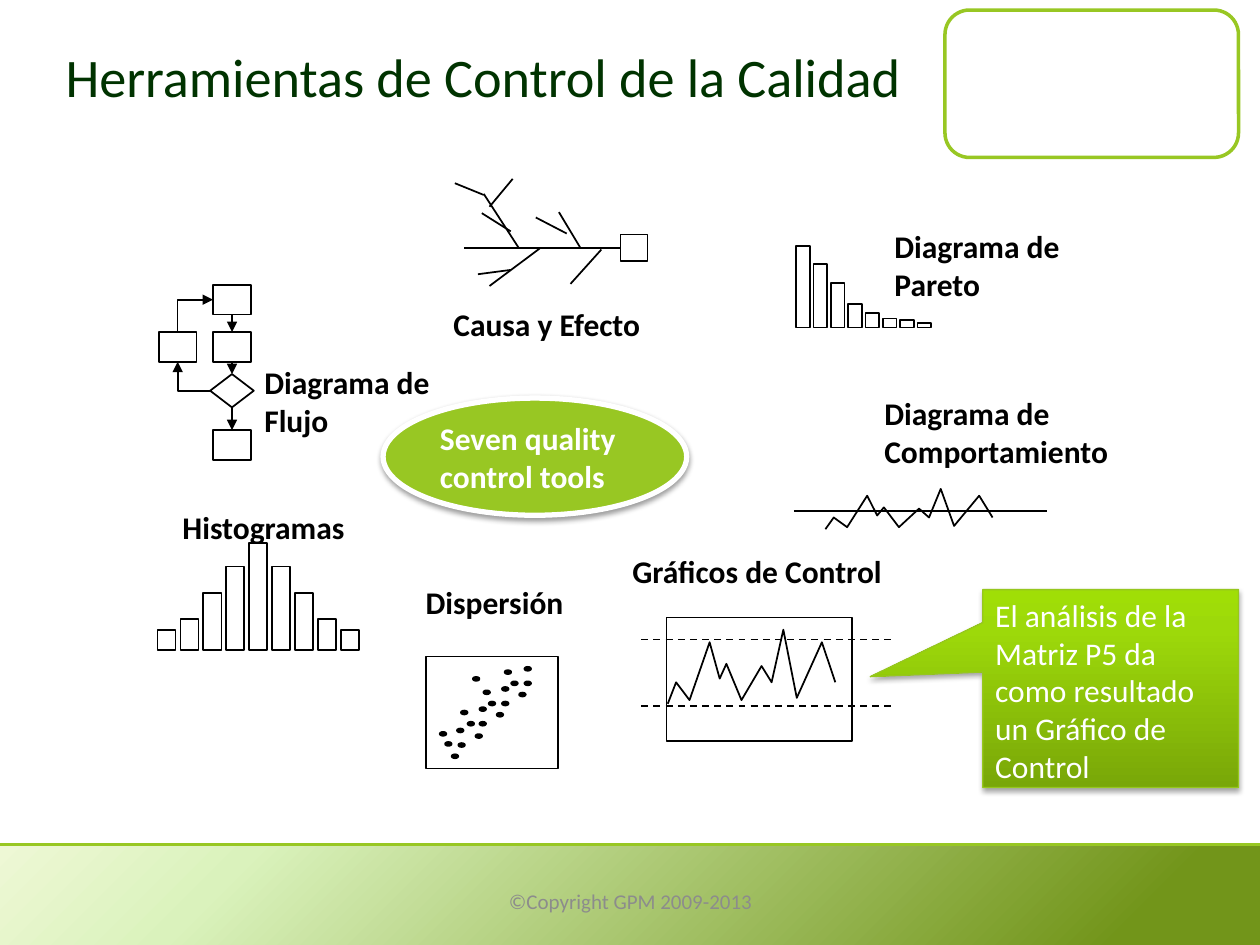
from dataclasses import dataclass
from lxml.etree import SubElement
from pptx import Presentation
from pptx.dml.color import RGBColor
from pptx.enum.dml import MSO_LINE
from pptx.enum.shapes import MSO_CONNECTOR as CX, MSO_SHAPE as SH
from pptx.enum.text import MSO_ANCHOR as ANC, MSO_AUTO_SIZE as FIT, PP_ALIGN as AL
from pptx.oxml.ns import qn
from pptx.util import Inches, Pt

C = {"white": "FFFFFF", "black": "000000", "lime": "98C723", "title": "003300",
     "grey": "8C8C8C", "edge": "96C71E"}
BAND = [(0, "EEF8D5"), (19, "DAF2BC"), (89, "72951A")]
CALLOUT = [(0, "79A708"), (80, "9DD90A"), (100, "A0DE06")]
# The run and control charts share one trace, in percent of its box
TRACE = [(0, 100), (5, 71), (13, 95), (25, 17), (31, 66), (35, 46), (44, 95),
         (56, 49), (62, 71), (69, 0), (77, 92), (92, 17), (100, 71)]


@dataclass
class Box:
    """An area in inches, divided into columns and rows."""
    x: float
    y: float
    w: float
    h: float
    cols: int = 100
    rows: int = 100

    def pt(self, cx, cy):
        return self.x + self.w * cx / self.cols, self.y + self.h * cy / self.rows

    def sub(self, cx, cy, cw, ch):
        return Box(*self.pt(cx, cy), self.w * cw / self.cols, self.h * ch / self.rows)

    def emu(self):
        return [Inches(v) for v in (self.x, self.y, self.w, self.h)]


def rgb(name):
    return RGBColor.from_string(C[name])


def write(sp, text, size, color, bold=False, align=AL.LEFT, anchor=ANC.TOP):
    tf = sp.text_frame
    tf.word_wrap, tf.auto_size, tf.vertical_anchor = True, FIT.NONE, anchor
    p = tf.paragraphs[0]
    p.alignment = align
    r = p.add_run()
    r.text = text
    r.font.name, r.font.size, r.font.bold = "Calibri", Pt(size), bold
    r.font.color.rgb = rgb(color)
    return tf


def add_shape(s, box, kind=SH.RECTANGLE, fill="white", line="black", width=1):
    sp = s.shapes.add_shape(kind, *box.emu())
    sp.shadow.inherit = False
    sp.fill.solid()
    sp.fill.fore_color.rgb = rgb(fill)
    if line:
        sp.line.color.rgb, sp.line.width = rgb(line), Pt(width)
    else:
        sp.line.fill.background()
    return sp


def set_gradient(sp, stops, angle):
    sp.fill.gradient()
    grad = sp._element.spPr.find(qn("a:gradFill"))
    for child in list(grad):
        grad.remove(child)
    lst = SubElement(grad, qn("a:gsLst"))
    for pos, color in stops:
        gs = SubElement(lst, qn("a:gs"), pos=str(pos * 1000))
        SubElement(gs, qn("a:srgbClr"), val=color)
    SubElement(grad, qn("a:lin"), ang=str(angle * 60000), scaled="0")


def set_shadow(sp, alpha, dist):
    effects = sp._element.spPr.find(qn("a:effectLst"))
    sh = SubElement(effects, qn("a:outerShdw"), blurRad=str(Pt(3.1)), dist=str(Pt(dist)),
                    dir="5400000", rotWithShape="0")
    clr = SubElement(sh, qn("a:srgbClr"), val=C["black"])
    SubElement(clr, qn("a:alpha"), val=str(alpha * 1000))


def add_line(s, start, end, color="black", width=1, kind=CX.STRAIGHT, arrow=None):
    ln = s.shapes.add_connector(kind, *[Inches(v) for v in (*start, *end)])
    ln.line.color.rgb, ln.line.width = rgb(color), Pt(width)
    if arrow:
        SubElement(ln.line._get_or_add_ln(), qn(f"a:{arrow}"), type="triangle", w="med", len="med")
    SubElement(ln._element.spPr, qn("a:effectLst"))
    return ln


def add_trace(s, box):
    pts = [tuple(Inches(v) for v in box.pt(*p)) for p in TRACE]
    fb = s.shapes.build_freeform(*pts[0], scale=1.0)
    fb.add_line_segments(pts[1:], close=False)
    sp = fb.convert_to_shape()
    sp.shadow.inherit = False
    sp.fill.background()
    sp.line.color.rgb, sp.line.width = rgb("black"), Pt(1)


def frame(s, page):
    """Corner panel, bottom band, title and footer."""
    add_shape(s, page.sub(75, 0.8, 23.3, 11.7), SH.ROUNDED_RECTANGLE, line="lime", width=2)
    set_gradient(add_shape(s, page.sub(0, 67.1, 100, 8.2), line=None), BAND, 45)
    add_line(s, page.pt(0, 67), page.pt(100, 67), "lime", 1.5)
    title = s.shapes.title
    title.left, title.top, title.width, title.height = page.sub(4.2, 0, 68.3, 12.1).emu()
    tf = write(title, "Herramientas de Control de la Calidad", 31, "title", anchor=ANC.MIDDLE)
    tf.margin_right = 0
    footer = s.shapes.add_textbox(*page.sub(34.2, 69.5, 31.7, 4).emu())
    write(footer, "©Copyright GPM 2009-2013", 12, "grey", align=AL.CENTER, anchor=ANC.MIDDLE)


def hub(s, box):
    sp = add_shape(s, box, SH.OVAL, "lime", "white", 3)
    set_shadow(sp, 38, 1.6)
    write(sp, "Seven quality control tools", 18, "white", True, anchor=ANC.MIDDLE)


def label(s, box, text):
    tb = s.shapes.add_textbox(*box.emu())
    write(tb, text, 18, "black", True).margin_right = 0


def bars(s, box, heights, width):
    step = (100 - width) / (len(heights) - 1)
    for i, h in enumerate(heights):
        add_shape(s, box.sub(i * step, 100 - h, width, h))


def scatter(s, box):
    add_shape(s, box)
    dots = [(77, 11), (77, 24), (62, 14), (67, 24), (73, 34), (60, 29), (60, 42),
            (46, 32), (50, 42), (56, 52), (43, 47), (43, 60), (29, 50), (34, 60),
            (40, 71), (26, 66), (27, 79), (13, 69), (17, 78), (22, 89), (38, 20)]
    for x, y in dots:
        add_shape(s, box.sub(x - 2.5, y - 1.75, 5, 3.5), SH.OVAL, "black")


def control_chart(s, box):
    add_shape(s, box.sub(10, 0, 73.5, 100))
    for y in (18, 72):
        add_line(s, box.pt(0, y), box.pt(100, y)).line.dash_style = MSO_LINE.DASH
    add_trace(s, box.sub(10.5, 10, 66.5, 60))


def run_chart(s, box):
    add_trace(s, box.sub(12.5, 0, 66, 100))
    add_line(s, box.pt(0, 54), box.pt(100, 54))


def flowchart(s, box):
    start, check, redo, end = [add_shape(s, box.sub(x, y, 39, 17))
                               for x, y in ((56, 0), (56, 27), (0, 27), (56, 83))]
    choice = add_shape(s, box.sub(53, 51, 45, 19), SH.FLOWCHART_DECISION)
    for a, b in ((start, check), (check, choice), (choice, end)):
        ln = add_line(s, (0, 0), (1, 1), arrow="tailEnd")
        ln.begin_connect(a, 2)
        ln.end_connect(b, 0)
    # Loop back: one-corner elbows out of the decision and into the start
    for a, b, arrow in (((53, 60.5), (19.5, 44), "tailEnd"), ((56, 8.5), (19.5, 27), "headEnd")):
        ln = add_line(s, box.pt(*a), box.pt(*b), kind=CX.ELBOW, arrow=arrow)
        ln._element.spPr.find(qn("a:prstGeom")).set("prst", "bentConnector2")


def fishbone(s, box):
    head = add_shape(s, box.sub(86, 52, 14, 25))
    spine = add_line(s, box.pt(86, 64.5), box.pt(5, 64.5))
    spine.begin_connect(head, 1)
    bones = [(33, 64, 15, 14), (44, 65, 18, 100), (29, 85, 12, 89), (29, 49, 14, 32),
             (18, 26, 30, 0), (15, 15, 0, 4), (65, 64, 54, 31), (58, 51, 42, 36),
             (76, 66, 60, 98)]
    for x1, y1, x2, y2 in bones:
        add_line(s, box.pt(x1, y1), box.pt(x2, y2))


def callout(s, box):
    sp = add_shape(s, box, SH.RECTANGULAR_CALLOUT, line="edge", width=0.75)
    sp.adjustments[0], sp.adjustments[1] = -0.94, -0.06
    set_gradient(sp, CALLOUT, 270)
    set_shadow(sp, 35, 1.8)
    write(sp, "El análisis de la Matriz P5 da como resultado un Gráfico de Control", 18, "white")


def main():
    prs = Presentation()
    prs.slide_width, prs.slide_height = Inches(10), Inches(7.5)
    s = prs.slides.add_slide(prs.slide_layouts[5])
    page = Box(0, 0, 10, 7.5, cols=100, rows=75)
    frame(s, page)
    hub(s, page.sub(30.4, 31.6, 24.1, 9.3))
    # Tool names
    for text, cell in (("Causa y Efecto", (35, 23.7, 18.7, 4)),
                       ("Diagrama de Pareto", (70, 17.5, 20.1, 7.1)),
                       ("Diagrama de Flujo", (20, 28.3, 14.3, 7.1)),
                       ("Histogramas", (13.5, 39.8, 15.6, 4)),
                       ("Dispersión", (32.8, 45.8, 13, 4)),
                       ("Gráficos de Control", (49.2, 43.3, 26.3, 4)),
                       ("Diagrama de Comportamiento", (69.2, 30.8, 27.1, 7.1))):
        label(s, page.sub(*cell), text)
    # Tool sketches
    bars(s, page.sub(12.5, 43.1, 16, 8.5), [19, 29, 53, 78, 100, 78, 53, 29, 19], 9)
    scatter(s, page.sub(33.8, 52.1, 10.5, 8.9))
    control_chart(s, page.sub(50.9, 49, 20, 9.8))
    run_chart(s, page.sub(63, 38.8, 20.1, 3.2))
    flowchart(s, page.sub(12.6, 22.6, 7.7, 13.9))
    fishbone(s, page.sub(36.1, 14.2, 15.3, 8.5))
    bars(s, page.sub(63.2, 19.5, 10.7, 6.5), [100, 78, 54, 29, 18, 11, 9, 6], 10)
    callout(s, page.sub(78, 46.8, 20.3, 15.7))
    prs.save("out.pptx")


if __name__ == "__main__":
    main()
